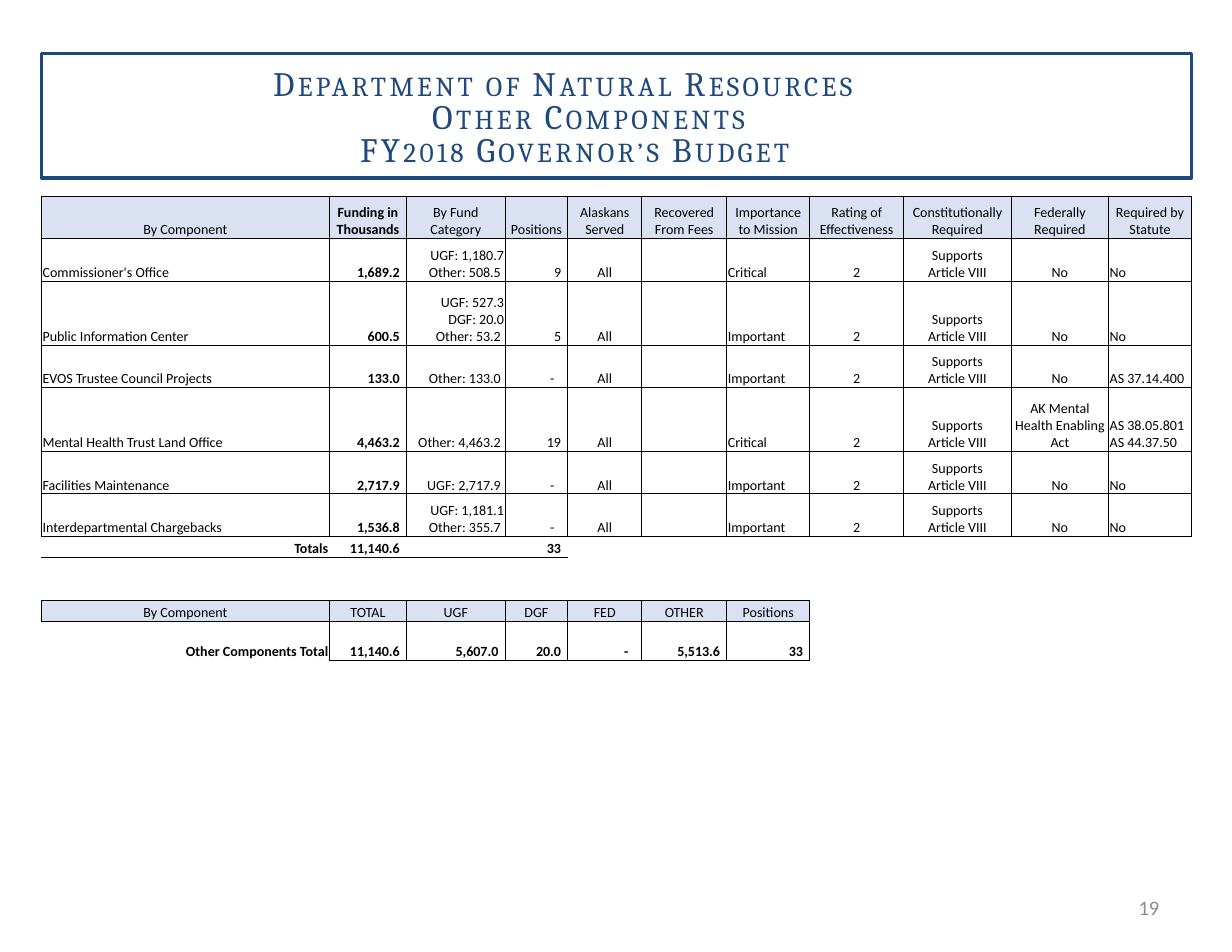
from dataclasses import dataclass

from lxml.etree import SubElement
from pptx import Presentation
from pptx.dml.color import RGBColor
from pptx.enum.shapes import MSO_SHAPE
from pptx.enum.text import MSO_ANCHOR, MSO_AUTO_SIZE, PP_ALIGN
from pptx.oxml import parse_xml
from pptx.oxml.ns import nsdecls, qn
from pptx.util import Inches, Pt


@dataclass(frozen=True)
class Theme:
    heading_font: str = "Cambria"
    body_font: str = "Calibri"
    navy: str = "1F497D"
    black: str = "000000"
    white: str = "FFFFFF"
    gray: str = "8C8C8C"
    header_fill: str = "D9E1F2"
    title_size: float = 22
    table_size: float = 9
    number_size: float = 13.2
    frame_width: float = 2.25
    border_width: float = 0.5
    plain_table_style: str = "{2D5ABB26-0587-4C30-8999-92F81FD0307C}"


LEFT, CENTER, RIGHT = PP_ALIGN.LEFT, PP_ALIGN.CENTER, PP_ALIGN.RIGHT
COLUMN_WIDTHS = [2.57, 0.69, 0.88, 0.56, 0.66, 0.76, 0.74, 0.84, 0.96, 0.87, 0.74]
ROW_HEIGHTS = [0.38, 0.38, 0.57, 0.38, 0.57, 0.38, 0.38, 0.19, 0.19, 0.19, 0.19, 0.35]
COMPONENT_ALIGNMENTS = [LEFT, RIGHT, RIGHT, RIGHT, CENTER, CENTER, LEFT, CENTER, CENTER, CENTER, LEFT]
HEADERS = ["By Component", "Funding in Thousands", "By Fund Category", "Positions",
           "Alaskans Served", "Recovered From Fees", "Importance to Mission",
           "Rating of Effectiveness", "Constitutionally Required", "Federally Required",
           "Required by Statute"]
COMPONENTS = [
    ("Commissioner's Office", "1,689.2", "UGF: 1,180.7\vOther: 508.5 ", "9", "Critical", "No", "No"),
    ("Public Information Center", "600.5", "UGF: 527.3\vDGF: 20.0\vOther: 53.2 ", "5",
     "Important", "No", "No"),
    ("EVOS Trustee Council Projects", "133.0", "Other: 133.0 ", "-", "Important", "No", "AS 37.14.400"),
    ("Mental Health Trust Land Office", "4,463.2", "Other: 4,463.2 ", "19", "Critical",
     "AK Mental Health Enabling Act", "AS 38.05.801 AS 44.37.50"),
    ("Facilities Maintenance", "2,717.9", "UGF: 2,717.9 ", "-", "Important", "No", "No"),
    ("Interdepartmental Chargebacks", "1,536.8", "UGF: 1,181.1\vOther: 355.7 ", "-",
     "Important", "No", "No"),
]
TOTALS = ["Totals", "11,140.6", "", "33"]
SUMMARY_HEADERS = ["By Component", "TOTAL", "UGF", "DGF", "FED", "OTHER", "Positions"]
SUMMARY = ["Other Components Total", "11,140.6", "5,607.0", "20.0", "-", "5,513.6", "33"]
TOTALS_ROW, SUMMARY_HEADER_ROW, SUMMARY_ROW = 7, 10, 11


class SlideBuilder:
    def __init__(self, slide, theme):
        self.slide = slide
        self.theme = theme

    def format_runs(self, paragraph, font, size, color, bold=False):
        for run in paragraph.runs:
            run.font.name = font
            run.font.size = Pt(size)
            run.font.bold = bold
            run.font.color.rgb = RGBColor.from_string(color)

    def frame(self, left, top, width, height):
        shape = self.slide.shapes.add_shape(
            MSO_SHAPE.RECTANGLE, Inches(left), Inches(top), Inches(width), Inches(height))
        shape.shadow.inherit = False
        shape.fill.background()
        shape.line.color.rgb = RGBColor.from_string(self.theme.navy)
        shape.line.width = Pt(self.theme.frame_width)

    def title(self, text, left, top, width, height):
        title = self.slide.shapes.title
        title.left, title.top = Inches(left), Inches(top)
        title.width, title.height = Inches(width), Inches(height)
        text_frame = title.text_frame
        text_frame.text = text
        text_frame.word_wrap = True
        text_frame.auto_size = MSO_AUTO_SIZE.NONE
        text_frame.vertical_anchor = MSO_ANCHOR.TOP
        for paragraph in text_frame.paragraphs:
            paragraph.alignment = CENTER
            paragraph.line_spacing = 0.8
            paragraph.space_before = Pt(0)
            self.format_runs(paragraph, self.theme.heading_font, self.theme.title_size, self.theme.navy)
            for run in paragraph.runs:
                properties = run.font._element
                properties.set("cap", "small")
                properties.set("spc", "220")

    def page_number(self, text, left, top, width, height):
        shape = self.slide.shapes.add_textbox(Inches(left), Inches(top), Inches(width), Inches(height))
        text_frame = shape.text_frame
        text_frame.text = text
        text_frame.word_wrap = True
        text_frame.vertical_anchor = MSO_ANCHOR.MIDDLE
        paragraph = text_frame.paragraphs[0]
        paragraph.alignment = RIGHT
        self.format_runs(paragraph, self.theme.body_font, self.theme.number_size, self.theme.gray)

    def table(self, left, top, widths, heights):
        shape = self.slide.shapes.add_table(
            len(heights), len(widths), Inches(left), Inches(top),
            Inches(sum(widths)), Inches(sum(heights)))
        table = shape.table
        table.first_row = False
        table.horz_banding = False
        table._tbl.tblPr.find(qn("a:tableStyleId")).text = self.theme.plain_table_style
        for column, width in zip(table.columns, widths):
            column.width = Inches(width)
        for row, height in zip(table.rows, heights):
            row.height = Inches(height)
        for cell in table.iter_cells():
            self.cell(cell)
        return table

    def cell(self, cell, text="", alignment=LEFT, bold=False, fill=None, borders="", right_margin=0.01):
        cell.margin_left = cell.margin_top = Inches(0.01)
        cell.margin_right = Inches(right_margin)
        cell.margin_bottom = 0
        cell.vertical_anchor = MSO_ANCHOR.BOTTOM
        cell.text_frame.text = text
        paragraph = cell.text_frame.paragraphs[0]
        paragraph.alignment = alignment
        self.format_runs(paragraph, self.theme.body_font, self.theme.table_size, self.theme.black, bold)
        if not text and paragraph._p.find(qn("a:endParaRPr")) is None:
            end = SubElement(paragraph._p, qn("a:endParaRPr"))
            end.set("sz", str(int(self.theme.table_size * 100)))
        if fill:
            cell.fill.solid()
            cell.fill.fore_color.rgb = RGBColor.from_string(fill)
        else:
            cell.fill.background()
        for position, side in enumerate(borders):
            line = parse_xml(
                f'<a:ln{side} {nsdecls("a")} w="{int(Pt(self.theme.border_width))}">'
                f'<a:solidFill><a:srgbClr val="{self.theme.black}"/></a:solidFill></a:ln{side}>')
            cell._tc.get_or_add_tcPr().insert(position, line)

    def header_row(self, table, row, labels, bold_column=None):
        for column, label in enumerate(labels):
            self.cell(table.cell(row, column), label, CENTER, column == bold_column,
                      self.theme.header_fill, "LRTB")

    def amount(self, cell, text, bold, fill, borders):
        margin = 0.12 if text == "-" else 0.06
        self.cell(cell, text, RIGHT, bold, fill, borders, margin)

    def component_row(self, table, row, component):
        name, funding, category, positions, importance, federal, statute = component
        values = [name, funding, category, positions, "All", "", importance, "2",
                  "Supports\vArticle VIII", federal, statute]
        for column, (value, alignment) in enumerate(zip(values, COMPONENT_ALIGNMENTS)):
            cell = table.cell(row, column)
            if column in (1, 3):
                self.amount(cell, value, column == 1, self.theme.white, "LRTB")
            else:
                self.cell(cell, value, alignment, False, self.theme.white, "LRTB")

    def total_row(self, table, row, values, name_borders, amount_borders):
        self.cell(table.cell(row, 0), values[0], RIGHT, True, self.theme.white, name_borders)
        for column, value in enumerate(values[1:], 1):
            self.amount(table.cell(row, column), value, True, self.theme.white, amount_borders)


def main():
    presentation = Presentation()
    presentation.slide_width, presentation.slide_height = Inches(11), Inches(8.5)
    slide = presentation.slides.add_slide(presentation.slide_layouts[5])
    builder = SlideBuilder(slide, Theme())
    builder.frame(0.37, 0.48, 10.27, 1.11)
    builder.title("Department of Natural Resources\nOther Components\nFY2018 Governor’s Budget",
                  0.64, 0.58, 9.72, 1.29)
    table = builder.table(0.37, 1.75, COLUMN_WIDTHS, ROW_HEIGHTS)
    builder.header_row(table, 0, HEADERS, bold_column=1)
    for row, component in enumerate(COMPONENTS, 1):
        builder.component_row(table, row, component)
    builder.total_row(table, TOTALS_ROW, TOTALS, "T", "T")
    builder.header_row(table, SUMMARY_HEADER_ROW, SUMMARY_HEADERS)
    builder.total_row(table, SUMMARY_ROW, SUMMARY, "RT", "LRTB")
    builder.page_number("19", 7.88, 7.88, 2.57, 0.45)
    presentation.save("out.pptx")


if __name__ == "__main__":
    main()
